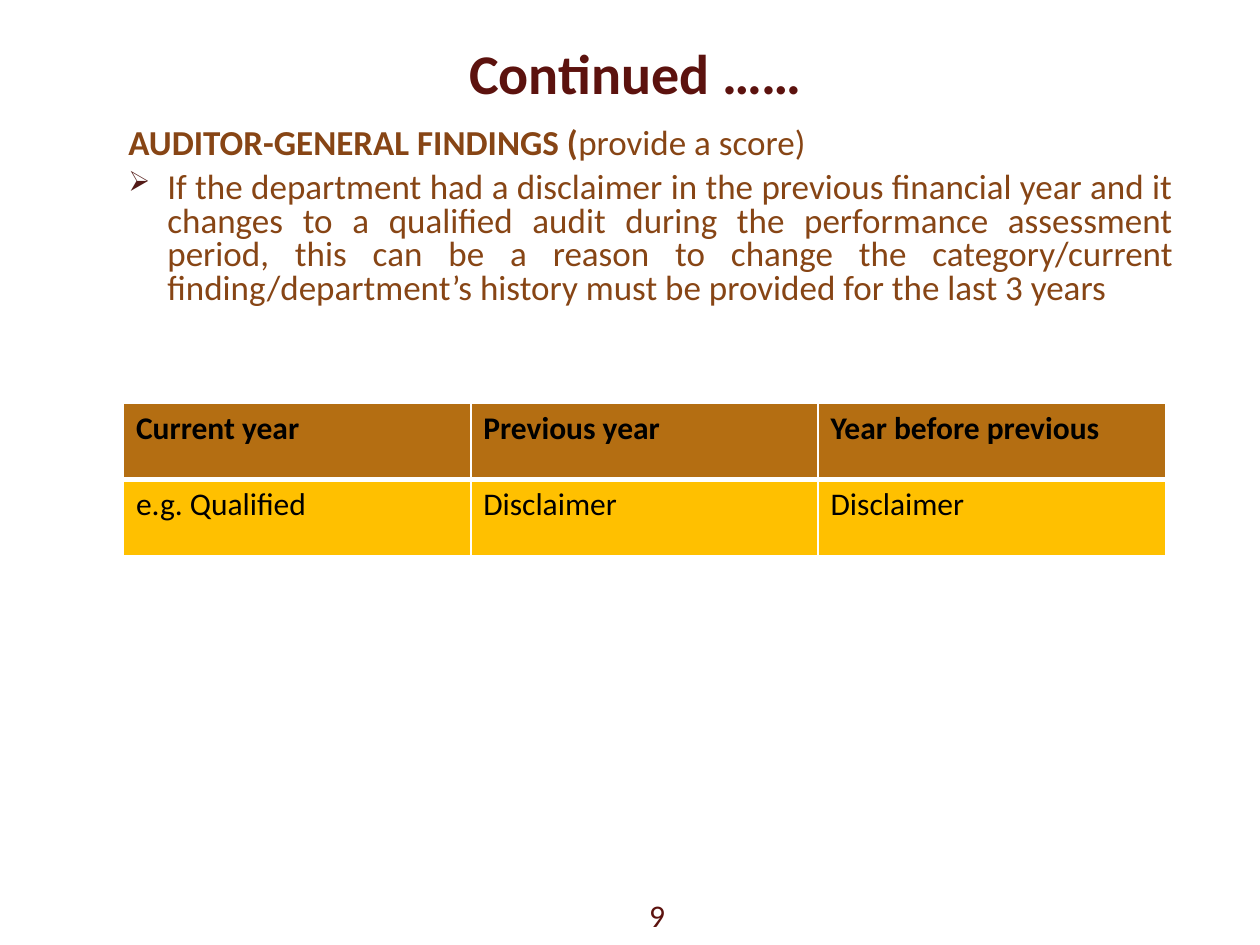
from lxml import etree
from pptx import Presentation
from pptx.dml.color import RGBColor
from pptx.enum.text import MSO_ANCHOR, PP_ALIGN
from pptx.oxml.ns import qn
from pptx.util import Inches, Pt

MAROON = RGBColor(0x5C, 0x12, 0x0E)
BROWN = RGBColor(0x87, 0x45, 0x15)
OCHRE = RGBColor(0xB4, 0x6E, 0x12)
GOLD = RGBColor(0xFF, 0xC0, 0x00)
BLACK = RGBColor(0, 0, 0)
CENTER, JUSTIFY = PP_ALIGN.CENTER, PP_ALIGN.JUSTIFY
MIDDLE = MSO_ANCHOR.MIDDLE


def style(par, size, color, bold=None):
    font = par.font
    font.name, font.size, font.bold = "Calibri", Pt(size), bold
    font.color.rgb = color


def edge(cell, side, width):
    """Draw a white border on one side of a table cell."""
    line = etree.SubElement(cell._tc.get_or_add_tcPr(), qn("a:" + side), w=str(Pt(width)))
    fill = etree.SubElement(line, qn("a:solidFill"))
    etree.SubElement(fill, qn("a:srgbClr"), val="FFFFFF")


prs = Presentation()
prs.slide_width, prs.slide_height = Inches(10), Inches(7.5)
slide = prs.slides.add_slide(prs.slide_layouts[5])

# Title
title = slide.shapes.title
title.left, title.top = Inches(0.28), Inches(0.2)
title.width, title.height = Inches(9.53), Inches(0.75)
title.text_frame.text = "Continued ……"
title.text_frame.vertical_anchor = MIDDLE
head = title.text_frame.paragraphs[0]
head.alignment = CENTER
style(head, 32, MAROON, True)

# Page number
page = slide.shapes.add_textbox(Inches(4.84), Inches(7.04), Inches(0.75), Inches(0.44))
page.text_frame.word_wrap = True
page.text_frame.vertical_anchor = MIDDLE
num = page.text_frame.paragraphs[0]
num.text = "9"
num.alignment = CENTER
style(num, 18, MAROON)

# Findings
body = slide.shapes.add_textbox(Inches(0.83), Inches(0.97), Inches(8.58), Inches(2.1))
frame = body.text_frame
frame.word_wrap = True

lead = frame.paragraphs[0]
lead._p.get_or_add_pPr().set("marL", str(Inches(0.09)))
lead.line_spacing = 0.8
style(lead, 20, BROWN)
lead.add_run().text = "AUDITOR-GENERAL FINDINGS ("
lead.runs[0].font.bold = True
lead.add_run().text = "provide a score)"

point = frame.add_paragraph()
point.text = (
    "If the department had a disclaimer in the previous financial year and it "
    "changes to a qualified audit during the performance assessment period, "
    "this can be a reason to change the category/current finding/department’s "
    "history must be provided for the last 3 years"
)
point.alignment = JUSTIFY
point.line_spacing = 0.8
point.space_before = Pt(6)
props = point._p.get_or_add_pPr()
props.set("marL", str(Inches(0.4)))
props.set("indent", str(Inches(-0.31)))
tint = etree.SubElement(props, qn("a:buClr"))
etree.SubElement(tint, qn("a:srgbClr"), val="531A17")
etree.SubElement(props, qn("a:buSzPct"), val="80000")
etree.SubElement(props, qn("a:buChar"), char="➢")
style(point, 20, BROWN)

# Audit history
rows = [
    ["Current year", "Previous year", "Year before previous"],
    ["e.g. Qualified", "Disclaimer", "Disclaimer"],
]
table = slide.shapes.add_table(
    2, 3, Inches(0.98), Inches(3.2), Inches(8.27), Inches(1.21)
).table
table.horz_banding = False
for r, row in enumerate(rows):
    top = r == 0
    for c, text in enumerate(row):
        cell = table.cell(r, c)
        cell.text = text
        style(cell.text_frame.paragraphs[0], 18, BLACK, top)
        for side in ("lnL", "lnR", "lnT", "lnB"):
            thick = side == ("lnB" if top else "lnT")
            edge(cell, side, 3 if thick else 1)
        cell.fill.solid()
        cell.fill.fore_color.rgb = OCHRE if top else GOLD

prs.save("out.pptx")
